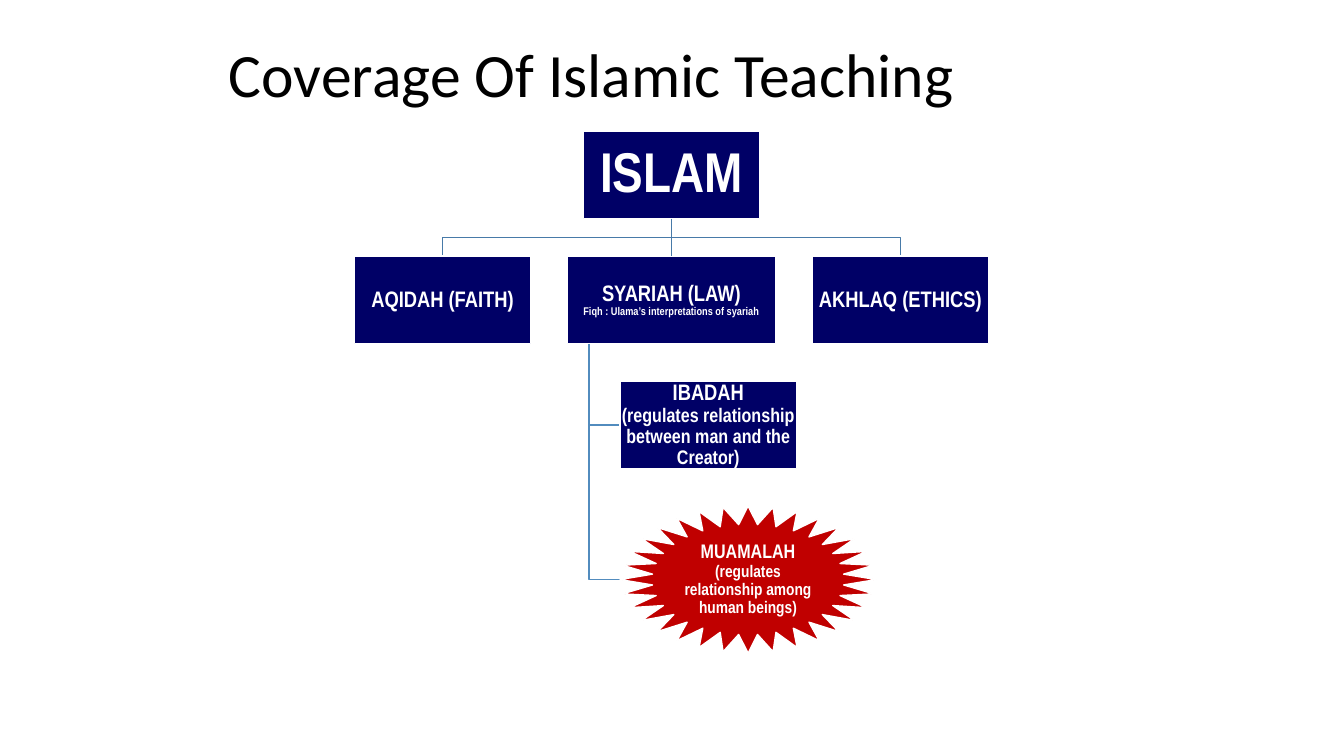
"""Build the Coverage Of Islamic Teaching slide."""
import pptx
import pptx.dml.color
import pptx.enum.shapes
import pptx.enum.text
import pptx.util
import pptx.oxml.ns
import lxml.etree

SHAPES = pptx.enum.shapes.MSO_SHAPE
ANCHOR = pptx.enum.text.MSO_ANCHOR
ALIGN = pptx.enum.text.PP_ALIGN

HEADING = "Coverage Of Islamic Teaching"
NAVY, RED, WHITE, BLACK = "000066", "C00000", "FFFFFF", "000000"
UPPER_LINE, LOWER_LINE = "487AA8", "528CBE"

CENTRE, COLUMN = 6.66, 2.27
TOP, ROW = 1.3, 1.24
BOX_WIDTH, BOX_HEIGHT = 1.75, 0.87
LAW_WIDTH, STAR_WIDTH, STAR_HEIGHT = 2.06, 2.54, 1.46
TRUNK, BRANCH = 5.84, 6.15
BRANCH_COLUMN = (BRANCH + BOX_WIDTH / 2 - CENTRE) / COLUMN
STAR_COLUMN = (BRANCH + STAR_WIDTH / 2 - CENTRE) / COLUMN

TOPICS = {
    "islam": dict(column=0, row=0, inset=0.03, lines=[("ISLAM", 40)]),
    "faith": dict(column=-1, row=1, lines=[("AQIDAH (FAITH)", 16)]),
    "law": dict(column=0, row=1, width=LAW_WIDTH, lines=[
        ("SYARIAH (LAW)", 16),
        ("Fiqh : Ulama’s interpretations of syariah", 8)]),
    "worship": dict(column=BRANCH_COLUMN, row=2, lines=[
        ("IBADAH", 16),
        ("(regulates relationship between man and the Creator)", 14)]),
    "dealings": dict(column=STAR_COLUMN, row=3, width=STAR_WIDTH,
                     height=STAR_HEIGHT, outline=SHAPES.STAR_32_POINT,
                     colour=RED, lines=[
                         ("MUAMALAH", 14),
                         ("(regulates relationship among human beings)", 12)]),
    "ethics": dict(column=1, row=1, lines=[("AKHLAQ (ETHICS)", 16)]),
}


def rgb(colour):
    """Turn a hex string into a colour."""
    return pptx.dml.color.RGBColor.from_string(colour)


def inches(*lengths):
    """Turn lengths in inches into slide units."""
    return [pptx.util.Inches(length) for length in lengths]


def apply(target, values):
    """Set every attribute named in a dict of format values."""
    for name, value in values.items():
        setattr(target, name, value)


def write(frame, lines, inset, colour, face, align, bold):
    """Write lines into one paragraph, parted by line breaks."""
    side, edge = inches(*inset)
    apply(frame, dict(margin_left=side, margin_right=side, margin_top=edge,
                      margin_bottom=edge, word_wrap=True,
                      auto_size=pptx.enum.text.MSO_AUTO_SIZE.NONE,
                      vertical_anchor=ANCHOR.MIDDLE))
    paragraph = frame.paragraphs[0]
    apply(paragraph, dict(alignment=align, line_spacing=0.9))
    for index, (words, size) in enumerate(lines):
        if index:
            paragraph.add_line_break()
        run = paragraph.add_run()
        run.text = words
        apply(run.font, dict(name=face, size=pptx.util.Pt(size), bold=bold))
        run.font.color.rgb = rgb(colour)


def stroke(line, colour):
    """Give a line its colour and a width of one point."""
    line.color.rgb = rgb(colour)
    line.width = pptx.util.Pt(1)


def add_branch(slide, points, colour):
    """Draw an open angled line through the points."""
    start, *rest = [inches(*point) for point in points]
    builder = slide.shapes.build_freeform(*start)
    builder.add_line_segments(rest, close=False)
    branch = builder.convert_to_shape()
    branch.shadow.inherit = False
    branch.fill.background()
    stroke(branch.line, colour)


def add_topic(slide, column, row, lines, width=BOX_WIDTH, height=BOX_HEIGHT,
              outline=SHAPES.RECTANGLE, colour=NAVY, inset=0.01):
    """Draw a topic centred on its column, at the top of its row."""
    left = CENTRE + column * COLUMN - width / 2
    topic = slide.shapes.add_shape(
        outline, *inches(left, TOP + row * ROW, width, height))
    topic.shadow.inherit = False
    topic.fill.solid()
    topic.fill.fore_color.rgb = rgb(colour)
    stroke(topic.line, WHITE)
    write(topic.text_frame, lines, (inset, inset), WHITE, "Arial Narrow",
          ALIGN.CENTER, True)
    return topic


def add_stem(slide, parent, child):
    """Join the foot of a parent to the top of its child."""
    stem = slide.shapes.add_connector(
        pptx.enum.shapes.MSO_CONNECTOR.STRAIGHT, 0, 0, 0, 0)
    stem.begin_connect(parent, 2)
    stem.end_connect(child, 0)
    stroke(stem.line, UPPER_LINE)
    lxml.etree.SubElement(stem.element.spPr, pptx.oxml.ns.qn("a:effectLst"))


def main():
    """Build and save the slide."""
    deck = pptx.Presentation()
    deck.slide_width, deck.slide_height = inches(13.33, 7.5)
    slide = deck.slides.add_slide(deck.slide_layouts[5])

    title = slide.shapes.title
    apply(title, dict(zip(("left", "top", "width", "height"),
                          inches(2.17, 0.3, 9, 0.93))))
    write(title.text_frame, [(HEADING, 44)], (0.1, 0.05), BLACK, "Calibri",
          ALIGN.LEFT, False)

    foot, head = TOP + BOX_HEIGHT, TOP + ROW
    middle = (foot + head) / 2
    for side in (1, -1):
        across = CENTRE + side * COLUMN
        add_branch(slide, [(CENTRE, foot), (CENTRE, middle),
                           (across, middle), (across, head)], UPPER_LINE)
    for row, height in ((3, STAR_HEIGHT), (2, BOX_HEIGHT)):
        level = TOP + row * ROW + height / 2
        add_branch(slide, [(TRUNK, foot + ROW), (TRUNK, level),
                           (BRANCH, level)], LOWER_LINE)

    drawn = {name: add_topic(slide, **topic) for name, topic in TOPICS.items()}
    add_stem(slide, drawn["islam"], drawn["law"])
    deck.save("out.pptx")


if __name__ == "__main__":
    main()
